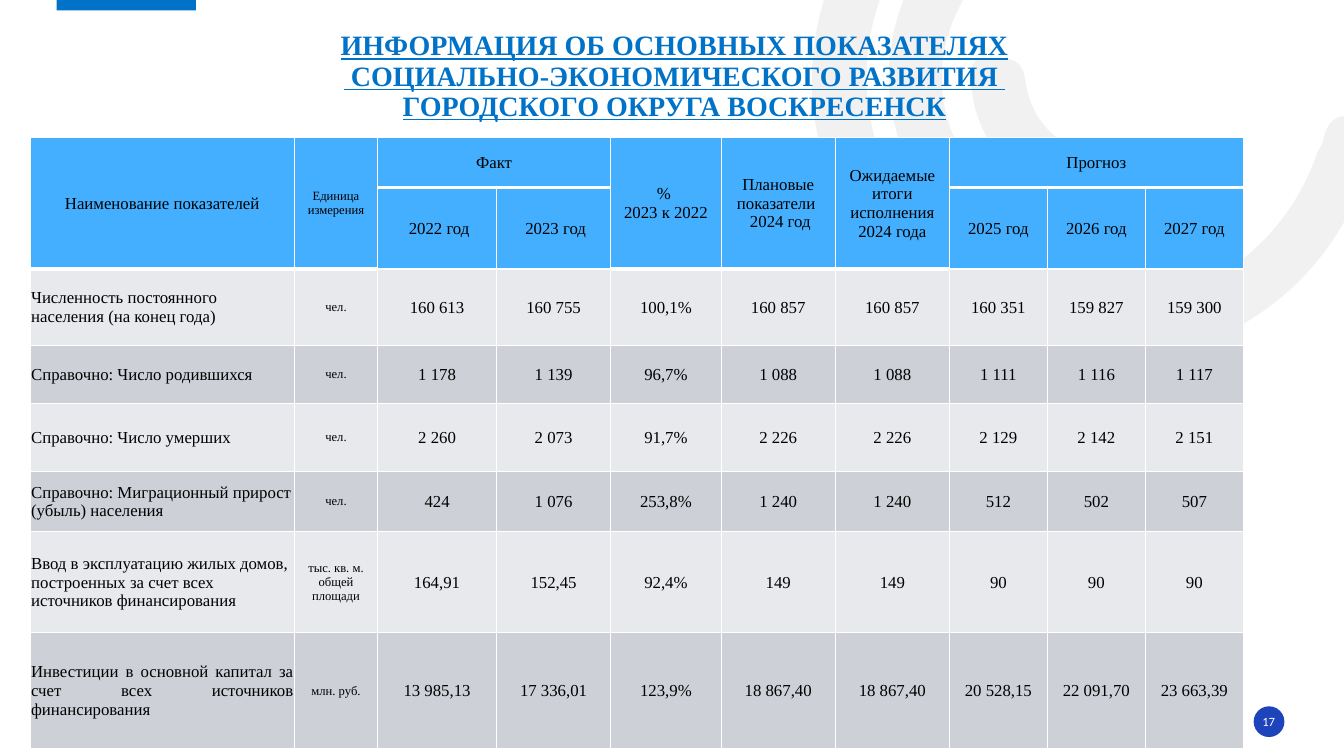
from dataclasses import dataclass

from lxml.etree import SubElement
from pptx import Presentation
from pptx.dml.color import RGBColor as Rgb
from pptx.enum.shapes import MSO_SHAPE as Preset
from pptx.enum.text import MSO_ANCHOR as Anchor, PP_ALIGN as Align
from pptx.oxml.ns import qn
from pptx.util import Pt


@dataclass(frozen=True)
class Theme:
    """Colours, fonts and type sizes of the slide."""
    accent: str = "0072C7"
    badge: str = "1E44BC"
    ring: str = "E7E6E6"
    ring_opacity: int = 53
    header: str = "44AFFF"
    bands: tuple = ("E8E9EC", "CDD1D7")
    ink: str = "000000"
    white: str = "FFFFFF"
    serif: str = "Times New Roman"
    sans: str = "Calibri"
    title_size: float = 20
    body_size: float = 12
    small_size: float = 9


THEME = Theme()
SLIDE_BOX = (0, 0, 960, 540)
TITLE = ("ИНФОРМАЦИЯ ОБ ОСНОВНЫХ ПОКАЗАТЕЛЯХ\v"
         " СОЦИАЛЬНО-ЭКОНОМИЧЕСКОГО РАЗВИТИЯ \v"
         "ГОРОДСКОГО ОКРУГА ВОСКРЕСЕНСК")

RINGS = [
    [(613, 165),
     (575, 107), (567, 36), (603, -36), (641, -109), (703, -146), (785, -149),
     (796, -149), (807, -151), (814, -140), (824, -126), (811, -111), (791, -111),
     (696, -111), (623, -42), (619, 49), (616, 130), (674, 202), (753, 217),
     (835, 233), (914, 188), (941, 109), (942, 107), (944, 104), (945, 101),
     (948, 86), (955, 80), (971, 84), (989, 89), (984, 102), (980, 112),
     (960, 176), (920, 221), (858, 246), (770, 279), (674, 248), (613, 165)],
    [(664, 143),
     (621, 83), (626, 5), (677, -49), (685, -57), (693, -68), (706, -56),
     (716, -46), (718, -36), (705, -23), (666, 19), (662, 78), (695, 121),
     (726, 165), (783, 179), (836, 155), (851, 148), (859, 153), (866, 165),
     (873, 180), (862, 184), (852, 189), (789, 223), (708, 203), (664, 143)],
    [(711, 109),
     (702, 94), (694, 77), (694, 59), (694, 53), (692, 41), (703, 42),
     (714, 42), (729, 38), (732, 55), (735, 79), (746, 95), (768, 107),
     (783, 113), (775, 127), (772, 136), (769, 148), (760, 143), (752, 140),
     (735, 135), (722, 122), (711, 109)],
]

COLUMN_WIDTHS = [188.5, 59.5, 85, 81.5, 79, 81.5, 81.5, 70, 70, 70]
ROW_HEIGHTS = [36, 48.25, 54.5, 41.75, 48.25, 43.25, 72, 82.75]
HEADER_SPANS = [(0, 0, 1, 0), (0, 1, 1, 1), (0, 2, 0, 3), (0, 4, 1, 4),
                (0, 5, 1, 5), (0, 6, 1, 6), (0, 7, 0, 9)]
INDICATORS = [
    ("Наименование показателей", "Единица измерения", "Факт", "", "% \n2023 к 2022",
     "Плановые показатели \n 2024 год", "Ожидаемые итоги исполнения 2024 года",
     "Прогноз", "", ""),
    ("", "", " 2022 год", " 2023 год", "", "", "", "2025 год", "2026 год", "2027 год"),
    ("Численность постоянного населения (на конец года)", "чел.", "160 613", "160 755",
     "100,1%", "160 857", "160 857", "160 351", "159 827", "159 300"),
    ("Справочно: Число родившихся", "чел.", "1 178", "1 139",
     "96,7%", "1 088", "1 088", "1 111", "1 116", "1 117"),
    ("Справочно: Число умерших", "чел.", "2 260", "2 073",
     "91,7%", "2 226", "2 226", "2 129", "2 142", "2 151"),
    ("Справочно: Миграционный прирост (убыль) населения", "чел.", "424", "1 076",
     "253,8%", "1 240", "1 240", "512", "502", "507"),
    ("Ввод в эксплуатацию жилых домов, построенных за счет всех источников финансирования",
     "тыс. кв. м. общей площади", "164,91", "152,45",
     "92,4%", "149", "149", "90", "90", "90"),
    ("Инвестиции в основной капитал за счет всех источников финансирования",
     "млн. руб.", "13 985,13", "17 336,01",
     "123,9%", "18 867,40", "18 867,40", "20 528,15", "22 091,70", "23 663,39"),
]


def paint(shape, colour):
    """Fill a shape with one colour, without outline or shadow."""
    shape.shadow.inherit = False
    shape.fill.solid()
    shape.fill.fore_color.rgb = Rgb.from_string(colour)
    shape.line.fill.background()


def style_text(frame, size, font, colour, align, bold=False, underline=False):
    """Format every run and paragraph of a text frame."""
    for paragraph in frame.paragraphs:
        paragraph.alignment = align
        for run in paragraph.runs:
            run.font.size = Pt(size)
            run.font.name = font
            run.font.color.rgb = Rgb.from_string(colour)
            run.font.bold = bold
            run.font.underline = underline


def set_insets(target, left, top, right, bottom):
    """Set the inner margins of a cell or a text frame."""
    target.margin_left, target.margin_top = Pt(left), Pt(top)
    target.margin_right, target.margin_bottom = Pt(right), Pt(bottom)


def add_text(slide, box, text, anchor):
    """Place a text box without margins and return its frame."""
    frame = slide.shapes.add_textbox(*map(Pt, box)).text_frame
    frame.text = text
    frame.word_wrap = True
    frame.vertical_anchor = anchor
    set_insets(frame, 0, 0, 0, 0)
    return frame


def bend(shape):
    """Join each three line segments of a freeform into a cubic curve."""
    lines = list(shape._element.iter(qn("a:lnTo")))
    for first, second, third in zip(lines[::3], lines[1::3], lines[2::3]):
        first.tag = qn("a:cubicBezTo")
        for line in (second, third):
            first.append(line[0])
            line.getparent().remove(line)


def add_ring(slide, left, top, curve):
    """Draw one pale ring from its chain of curve points."""
    start, *rest = [(Pt(left + x), Pt(top + y)) for x, y in curve]
    outline = slide.shapes.build_freeform(*start)
    outline.add_line_segments(rest, close=True)
    ring = outline.convert_to_shape()
    bend(ring)
    paint(ring, THEME.ring)
    tint = next(ring._element.spPr.iter(qn("a:srgbClr")))
    SubElement(tint, qn("a:alpha"), val=str(THEME.ring_opacity * 1000))


def add_backdrop(slide, box):
    """Draw the pale rings and the accent bar at the top edge."""
    left, top, _, _ = box
    for curve in RINGS:
        add_ring(slide, left, top, curve)
    accent_bar = slide.shapes.add_shape(
        Preset.RECTANGLE, Pt(left + 40.5), Pt(top - 1.5), Pt(99.5), Pt(9))
    paint(accent_bar, THEME.accent)


def add_page_number(slide, box, number):
    """Draw the round badge with the page number."""
    left, top, width, _ = box
    badge = slide.shapes.add_shape(Preset.OVAL, *map(Pt, box))
    paint(badge, THEME.badge)
    frame = add_text(slide, (left - 0.5, top + 3.5, width + 0.5, 14.5), number,
                     Anchor.MIDDLE)
    style_text(frame, THEME.small_size, THEME.sans, THEME.white, Align.CENTER)


def add_title(slide, box):
    """Write the underlined heading."""
    frame = add_text(slide, box, TITLE, Anchor.BOTTOM)
    frame.paragraphs[0].line_spacing = 0.9
    style_text(frame, THEME.title_size, THEME.serif, THEME.accent, Align.CENTER,
               bold=True, underline=True)


def set_borders(cell, bottom_width):
    """Give a cell white borders, with its own width at the bottom."""
    properties = cell._tc.get_or_add_tcPr()
    for side, width in (("L", 1), ("R", 1), ("T", 1), ("B", bottom_width)):
        border = SubElement(properties, qn(f"a:ln{side}"), w=str(Pt(width)))
        SubElement(SubElement(border, qn("a:solidFill")), qn("a:srgbClr"), val=THEME.white)


def style_cell(cell, row, column):
    """Format a table cell by its place in the grid."""
    is_header, is_unit = row < 2, column == 1
    set_borders(cell, 3 if row == 0 else 1)
    cell.fill.solid()
    cell.fill.fore_color.rgb = Rgb.from_string(
        THEME.header if is_header else THEME.bands[row % 2])
    cell.vertical_anchor = Anchor.MIDDLE
    roomy = is_unit and row < 6
    set_insets(cell, *((7.2, 3.6, 7.2, 3.6) if roomy else (0.5, 0.5, 0.5, 0)))
    align = Align.CENTER
    if column == 0 and not is_header:
        align = Align.JUSTIFY if row == len(INDICATORS) - 1 else Align.LEFT
    style_text(cell.text_frame, THEME.small_size if is_unit else THEME.body_size,
               THEME.serif, THEME.ink, align)


def add_indicators(slide, box):
    """Build the table of indicators."""
    table = slide.shapes.add_table(
        len(ROW_HEIGHTS), len(COLUMN_WIDTHS), *map(Pt, box)).table
    table.first_row = table.horz_banding = False
    for column, width in zip(table.columns, COLUMN_WIDTHS):
        column.width = Pt(width)
    for row, height in zip(table.rows, ROW_HEIGHTS):
        row.height = Pt(height)
    for row, entries in enumerate(INDICATORS):
        for column, entry in enumerate(entries):
            cell = table.cell(row, column)
            cell.text_frame.text = entry
            style_cell(cell, row, column)
    for top, left, bottom, right in HEADER_SPANS:
        table.cell(top, left).merge(table.cell(bottom, right))


def main():
    """Build the slide and save it."""
    deck = Presentation()
    deck.slide_width, deck.slide_height = map(Pt, SLIDE_BOX[2:])
    slide = deck.slides.add_slide(deck.slide_layouts[6])
    add_backdrop(slide, SLIDE_BOX)
    add_page_number(slide, (895.5, 504.5, 22, 22), "17")
    add_indicators(slide, (21.75, 98, sum(COLUMN_WIDTHS), sum(ROW_HEIGHTS)))
    add_title(slide, (113, 15, 737.5, 72.5))
    deck.save("out.pptx")


if __name__ == "__main__":
    main()
